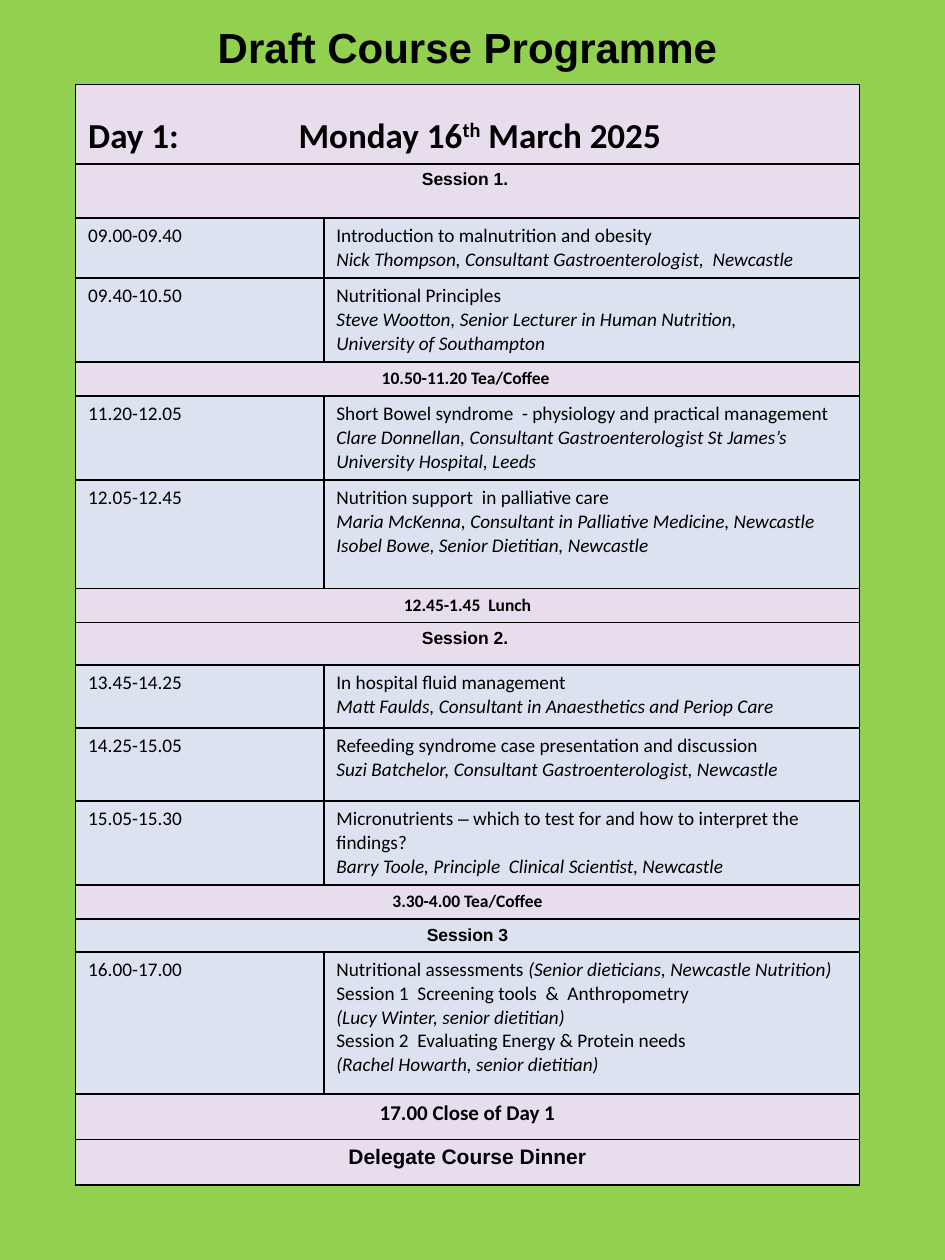
import pptx
import pptx.dml.color
import pptx.enum.text
import pptx.oxml
import pptx.oxml.ns
import pptx.util
from pptx.util import Inches

GREEN = pptx.dml.color.RGBColor(0x92, 0xD0, 0x50)
LILAC = pptx.dml.color.RGBColor(0xE7, 0xDD, 0xED)
BLUE = pptx.dml.color.RGBColor(0xDC, 0xE2, 0xEF)
BLACK = pptx.dml.color.RGBColor(0, 0, 0)
CENTER = pptx.enum.text.PP_ALIGN.CENTER
LEFT = pptx.enum.text.PP_ALIGN.LEFT

DATE_TAB = Inches(1.67)
COLUMN_WIDTHS = (1.97, 4.25)
ITALIC = {"italic": True}

# Banner rows: height, text, format, fill
# Talk rows: height, time, lines, each line a list of (text, format) runs
PROGRAMME = [
    ("banner", 0.43, "Session 1. ", {"font": "Arial"}, LILAC),
    ("talk", 0.47, "09.00-09.40", [
        [("Introduction to malnutrition and obesity", {})],
        [("Nick Thompson, Consultant Gastroenterologist,  Newcastle", ITALIC)]]),
    ("talk", 0.66, "09.40-10.50", [
        [("Nutritional Principles", {})],
        [("Steve Wootton, Senior Lecturer in Human Nutrition,", ITALIC)],
        [("University of Southampton", ITALIC)]]),
    ("banner", 0.27, "10.50-11.20 Tea/Coffee ", {}, LILAC),
    ("talk", 0.66, "11.20-12.05", [
        [("Short Bowel syndrome  - physiology and practical management", {})],
        [("Clare Donnellan, Consultant Gastroenterologist St James’s "
          "University Hospital, Leeds", ITALIC)]]),
    ("talk", 0.86, "12.05-12.45", [
        [("Nutrition support  in palliative care", {})],
        [("Maria McKenna, Consultant in Palliative Medicine, Newcastle", ITALIC)],
        [("Isobel Bowe, Senior Dietitian, Newcastle", ITALIC)]]),
    ("banner", 0.27, "12.45-1.45  Lunch", {}, LILAC),
    ("banner", 0.34, "Session 2. ", {"font": "Arial"}, LILAC),
    ("talk", 0.5, "13.45-14.25", [
        [("In hospital fluid management", {})],
        [("Matt Faulds, Consultant in Anaesthetics and Periop Care", ITALIC)]]),
    ("talk", 0.58, "14.25-15.05", [
        [("Refeeding syndrome case presentation and discussion", {})],
        [("Suzi Batchelor, Consultant Gastroenterologist, Newcastle", ITALIC)]]),
    ("talk", 0.66, "15.05-15.30", [
        [("Micronutrients ", {}), ("–", {"font": "Arial"}),
         (" which to test for and how to interpret the findings?", {})],
        [("Barry Toole, Principle  Clinical Scientist, Newcastle", ITALIC)]]),
    ("banner", 0.27, "3.30-4.00 Tea/Coffee", {}, LILAC),
    ("banner", 0.26, "Session 3", {"font": "Arial"}, BLUE),
    ("talk", 1.13, "16.00-17.00", [
        [("Nutritional assessments ", {}),
         ("(Senior dieticians, Newcastle Nutrition)", ITALIC)],
        [("Session 1  Screening tools  &  Anthropometry", {})],
        [("(Lucy Winter, senior dietitian)", ITALIC)],
        [("Session 2  Evaluating Energy & Protein needs", {})],
        [("(Rachel Howarth, senior dietitian)", ITALIC)]]),
    ("banner", 0.36, "17.00 Close of Day 1", {"size": 12}, LILAC),
    ("banner", 0.36, "Delegate Course Dinner", {"size": 12, "font": "Arial"}, LILAC),
]


def add_text(paragraph, text, *, size=11, font="Calibri", bold=False,
             italic=False, baseline=0):
    """Add one formatted run to a paragraph."""
    run = paragraph.add_run()
    run.text = text
    run.font.size = pptx.util.Pt(size)
    run.font.name = font
    run.font.bold = bold
    run.font.italic = italic
    run.font.color.rgb = BLACK
    if baseline:
        run._r.get_or_add_rPr().set("baseline", str(baseline * 1000))


def add_border(cell):
    properties = cell._tc.get_or_add_tcPr()
    for index, side in enumerate(("lnL", "lnR", "lnT", "lnB")):
        line = pptx.oxml.parse_xml(
            f'<a:{side} {pptx.oxml.ns.nsdecls("a")} w="12700"><a:solidFill>'
            f'<a:srgbClr val="{BLACK}"/></a:solidFill></a:{side}>')
        properties.insert(index, line)


def fill_cell(cell, lines, fill, alignment=LEFT):
    """Write lines of runs into a cell."""
    frame = cell.text_frame
    for index, line in enumerate(lines):
        paragraph = frame.paragraphs[0] if index == 0 else frame.add_paragraph()
        paragraph.alignment = alignment
        for text, text_format in line:
            add_text(paragraph, text, **text_format)
    cell.fill.solid()
    cell.fill.fore_color.rgb = fill


def fill_banner(table, row, lines, fill, alignment=CENTER):
    cell = table.cell(row, 0)
    cell.merge(table.cell(row, 1))
    fill_cell(cell, lines, fill, alignment)
    return cell


def fill_date_row(table):
    heading = {"size": 20, "bold": True}
    line = [("Day 1:\tMonday 16", heading),
            ("th", {**heading, "baseline": 30}),
            (" March 2025", heading)]
    cell = fill_banner(table, 0, [line], LILAC, LEFT)
    cell.vertical_anchor = pptx.enum.text.MSO_ANCHOR.BOTTOM
    tabs = pptx.oxml.parse_xml(
        f'<a:tabLst {pptx.oxml.ns.nsdecls("a")}>'
        f'<a:tab pos="{DATE_TAB}" algn="l"/></a:tabLst>')
    cell.text_frame.paragraphs[0]._p.get_or_add_pPr().append(tabs)


def add_programme(slide):
    heights = [0.63] + [entry[1] for entry in PROGRAMME]
    table = slide.shapes.add_table(
        len(heights), len(COLUMN_WIDTHS), Inches(0.6), Inches(0.67),
        Inches(sum(COLUMN_WIDTHS)), Inches(sum(heights))).table
    table.first_row = table.horz_banding = False
    for column, width in zip(table.columns, COLUMN_WIDTHS):
        column.width = Inches(width)
    for row, height in zip(table.rows, heights):
        row.height = Inches(height)

    fill_date_row(table)
    for row, (kind, _, text, *details) in enumerate(PROGRAMME, start=1):
        if kind == "banner":
            text_format, fill = details
            line = [(text, {"size": 10, "bold": True, **text_format})]
            fill_banner(table, row, [line], fill)
        else:
            fill_cell(table.cell(row, 0), [[(text, {})]], BLUE)
            fill_cell(table.cell(row, 1), details[0], BLUE)
    for cell in table.iter_cells():
        add_border(cell)


def add_title(slide):
    box = slide.shapes.add_textbox(Inches(1.27), Inches(0.12), Inches(4.88), Inches(0.51))
    frame = box.text_frame
    frame.word_wrap = True
    frame.auto_size = pptx.enum.text.MSO_AUTO_SIZE.SHAPE_TO_FIT_TEXT
    paragraph = frame.paragraphs[0]
    paragraph.alignment = CENTER
    add_text(paragraph, "Draft Course Programme", size=24, font="Arial", bold=True)


def main():
    presentation = pptx.Presentation()
    presentation.slide_width = Inches(7.5)
    presentation.slide_height = Inches(10)
    slide = presentation.slides.add_slide(presentation.slide_layouts[6])

    # Background
    slide.background.fill.solid()
    slide.background.fill.fore_color.rgb = GREEN

    # Programme table and title
    add_programme(slide)
    add_title(slide)
    presentation.save("out.pptx")


if __name__ == "__main__":
    main()
